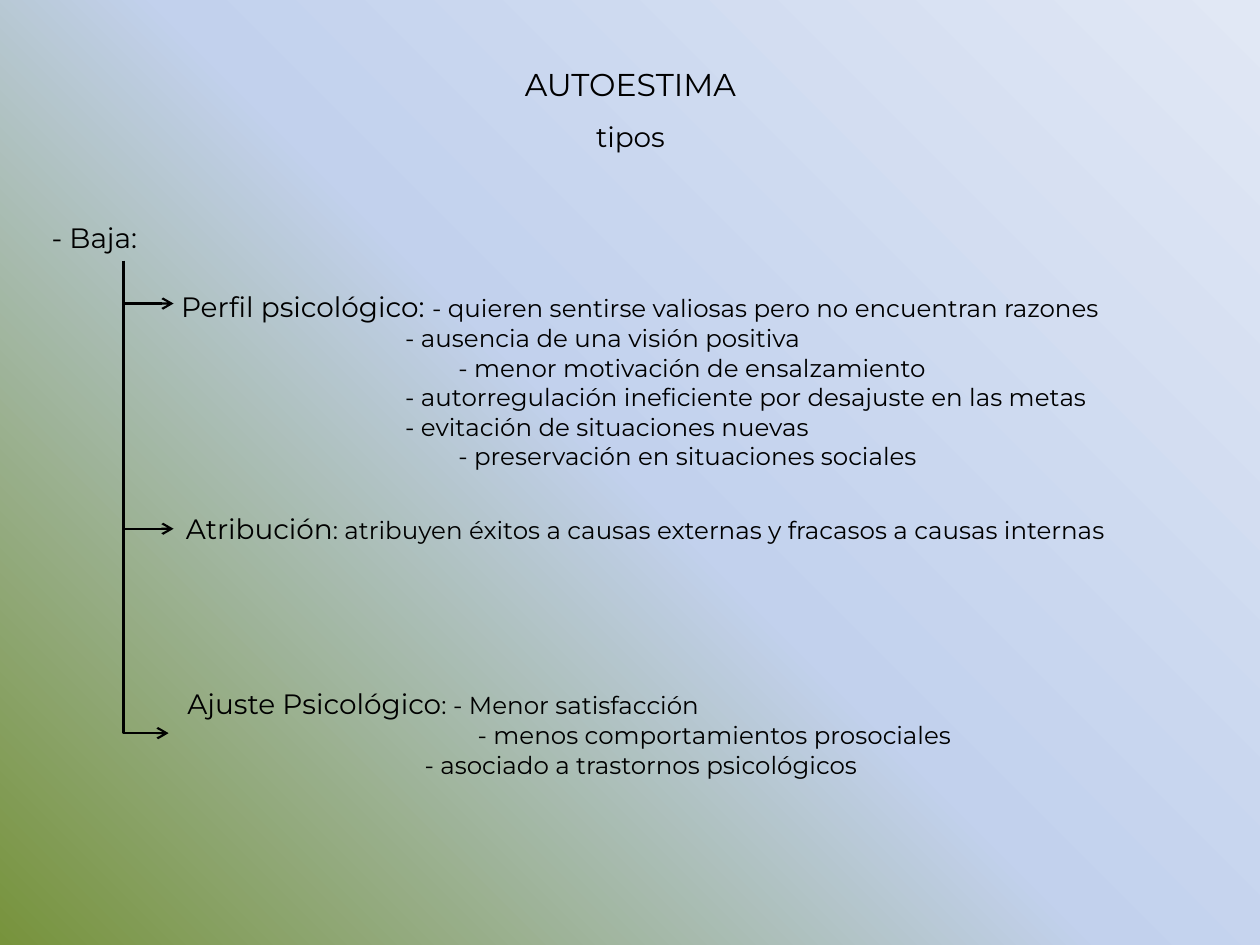
from dataclasses import dataclass

from lxml import etree
from pptx import Presentation
from pptx.dml.color import RGBColor
from pptx.enum.shapes import MSO_CONNECTOR
from pptx.enum.text import MSO_ANCHOR, MSO_AUTO_SIZE, PP_ALIGN
from pptx.oxml.ns import qn
from pptx.util import Cm, Pt

ELBOW = MSO_CONNECTOR.ELBOW
TOP = MSO_ANCHOR.TOP
GROW = MSO_AUTO_SIZE.SHAPE_TO_FIT_TEXT
CENTER, JUSTIFY = PP_ALIGN.CENTER, PP_ALIGN.JUSTIFY
BOTTOM_SIDE, LEFT_SIDE = 2, 1


@dataclass(frozen=True)
class Theme:
    font: str = "Montserrat"
    ink: str = "000000"
    stops: tuple = ((0, "77933C"), (50, "C2D1ED"), (100, "E1E8F5"))
    title: int = 18
    head: int = 16
    body: int = 14
    line: float = 1.25


class Page:
    def __init__(self, deck, theme):
        self.theme = theme
        self.ink = RGBColor.from_string(theme.ink)
        self.slide = deck.slides.add_slide(deck.slide_layouts[5])

    def backdrop(self):
        """Fill the background with circles that spread from the lower left."""
        self.slide.background.fill.gradient()
        grad = next(self.slide.element.iter(qn("a:gradFill")))
        for child in list(grad):
            grad.remove(child)
        stops = etree.SubElement(grad, qn("a:gsLst"))
        for place, color in self.theme.stops:
            stop = etree.SubElement(stops, qn("a:gs"), pos=str(place * 1000))
            etree.SubElement(stop, qn("a:srgbClr"), val=color)
        shade = etree.SubElement(grad, qn("a:path"))
        shade.set("path", "circle")
        etree.SubElement(shade, qn("a:fillToRect"),
                         l="0", t="100000", r="100000", b="0")

    def put_rows(self, frame, rows, align, spacing=None):
        """Fill a frame; each row is an indent in cm and (text, size) parts."""
        frame.word_wrap = True
        frame.auto_size = GROW
        frame.vertical_anchor = TOP
        for num, (indent, *parts) in enumerate(rows):
            par = frame.add_paragraph() if num else frame.paragraphs[0]
            par.alignment = align
            if spacing:
                par.line_spacing = spacing
            if indent:
                props = par._p.get_or_add_pPr()
                props.set("marL", str(Cm(indent)))
                props.set("indent", "0")
            for text, size in parts:
                run = par.add_run()
                run.text = text
                run.font.name = self.theme.font
                run.font.size = Pt(size)
                run.font.color.rgb = self.ink

    def title(self, box, rows):
        shape = self.slide.shapes.title
        shape.left, shape.top, shape.width, shape.height = map(Cm, box)
        self.put_rows(shape.text_frame, rows, CENTER, 1.5)

    def text(self, box, rows):
        shape = self.slide.shapes.add_textbox(*map(Cm, box))
        self.put_rows(shape.text_frame, rows, JUSTIFY)
        return shape

    def branch(self, source, end, target=None):
        """Draw an arrow down from the source, then right to the end point."""
        x, y = source.left + source.width // 2, source.top + source.height
        right, low = map(Cm, end)
        link = self.slide.shapes.add_connector(ELBOW, x, y, right, low)
        link.begin_connect(source, BOTTOM_SIDE)
        if target:
            link.end_connect(target, LEFT_SIDE)
        # The one-bend preset runs right then down, so it is turned and flipped.
        wide, high = right - x, low - y
        link.left, link.top = x + (wide - high) // 2, y + (high - wide) // 2
        link.width, link.height = high, wide
        props = link.element.spPr
        frame = props.find(qn("a:xfrm"))
        frame.set("rot", "16200000")
        frame.set("flipH", "1")
        props.find(qn("a:prstGeom")).set("prst", "bentConnector2")
        link.line.color.rgb = self.ink
        link.line.width = Pt(self.theme.line)
        etree.SubElement(props.find(qn("a:ln")), qn("a:tailEnd"), type="arrow")
        etree.SubElement(props, qn("a:effectLst"))


def main():
    deck = Presentation()
    deck.slide_width, deck.slide_height = Cm(25.4), Cm(19.05)
    theme = Theme()
    head, body = theme.head, theme.body
    page = Page(deck, theme)
    page.backdrop()

    page.title((0.71, 0.81, 24, 2.44), [
        (0, ("AUTOESTIMA", theme.title)),
        (0, ("tipos", head)),
    ])
    low = page.text((0.79, 4.32, 3.4, 0.94), [(0, ("- Baja:", head))])

    near, far = 4.52, 5.59
    page.text((3.4, 5.72, 22, 4.52), [
        (0, ("Perfil psicológico: ", head),
         ("- quieren sentirse valiosas pero no encuentran razones", body)),
        (near, ("- ausencia de una visión positiva", body)),
        (far, ("- menor motivación de ensalzamiento", body)),
        (near, ("- autorregulación ineficiente por desajuste en las metas",
                body)),
        (near, ("- evitación de situaciones nuevas", body)),
        (far, ("- preservación en situaciones sociales", body)),
    ])
    cause = page.text((3.5, 10.19, 21.9, 0.94), [
        (0, ("Atribución", head),
         (": atribuyen éxitos a causas externas y fracasos a causas internas",
          body)),
    ])
    adjust = page.text((3.4, 13.72, 21.31, 2.13), [
        (0.13, ("Ajuste Psicológico", head), (": - Menor satisfacción", body)),
        (5.98, ("- menos comportamientos prosociales", body)),
        (4.91, ("- asociado a trastornos psicológicos", body)),
    ])

    page.branch(low, (3.5, 6.12))
    page.branch(low, (3.5, 10.66), cause)
    page.branch(low, (3.4, 14.78), adjust)
    deck.save("out.pptx")


if __name__ == "__main__":
    main()
